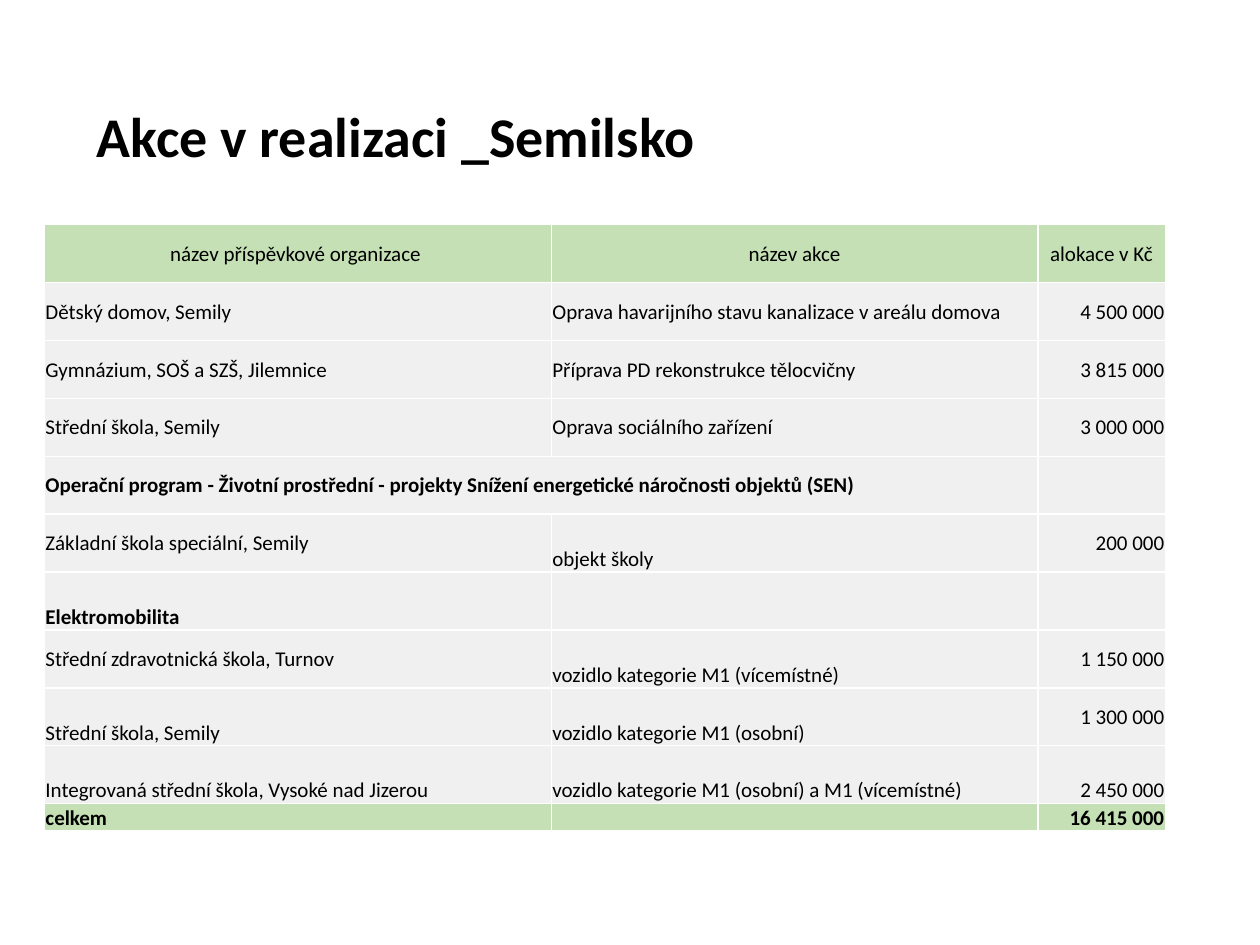
from lxml import etree
from pptx import Presentation
from pptx.dml.color import RGBColor
from pptx.enum.text import MSO_ANCHOR, MSO_AUTO_SIZE, PP_ALIGN
from pptx.oxml.ns import qn
from pptx.util import Pt

LEFT, CENTER, RIGHT = PP_ALIGN.LEFT, PP_ALIGN.CENTER, PP_ALIGN.RIGHT
MIDDLE, BOTTOM = MSO_ANCHOR.MIDDLE, MSO_ANCHOR.BOTTOM
GROW = MSO_AUTO_SIZE.SHAPE_TO_FIT_TEXT
GREEN, GRAY, WHITE, BLACK = "C5E0B4", "F0F0F0", "FFFFFF", "000000"


def color(value):
    return RGBColor.from_string(value)


def add_span(para, text, size, bold):
    span = para.add_run()
    span.text = text
    span.font.name = "Calibri"
    span.font.size = Pt(size)
    span.font.bold = bold
    span.font.color.rgb = color(BLACK)


deck = Presentation()
deck.slide_width, deck.slide_height = Pt(720), Pt(540)
page = deck.slides.add_slide(deck.slide_layouts[6])

title = page.shapes.add_textbox(Pt(48.2), Pt(54.7), Pt(601), Pt(46)).text_frame
title.word_wrap = True
title.auto_size = GROW
add_span(title.paragraphs[0], "Akce v realizaci _Semilsko", 32, True)

rows = [
    ("název příspěvkové organizace ", "název akce", "alokace v Kč"),
    ("Dětský domov, Semily", "Oprava havarijního stavu kanalizace v areálu domova", "4 500 000"),
    ("Gymnázium, SOŠ a SZŠ, Jilemnice", "Příprava PD rekonstrukce tělocvičny", "3 815 000"),
    ("Střední škola, Semily", "Oprava sociálního zařízení", "3 000 000"),
    ("Operační program - Životní prostřední - projekty Snížení energetické náročnosti objektů (SEN)", "", ""),
    ("Základní škola speciální, Semily", "objekt školy", "200 000"),
    ("Elektromobilita", "", ""),
    ("Střední zdravotnická škola, Turnov", "vozidlo kategorie M1 (vícemístné)", "1 150 000"),
    ("Střední škola, Semily", "vozidlo kategorie M1 (osobní)", "1 300 000"),
    ("Integrovaná střední škola, Vysoké nad Jizerou", "vozidlo kategorie M1 (osobní) a M1 (vícemístné)", "2 450 000"),
    ("celkem", "", "16 415 000"),
]
PROGRAM_ROW, TOTAL_ROW = 4, len(rows) - 1
bold_rows = {PROGRAM_ROW, 6, TOTAL_ROW}
bottom_starts = (6, 5, 9)
middle_cells = {(7, 0)}

frame = page.shapes.add_table(len(rows), 3, Pt(25.4), Pt(128.4), Pt(640.5), Pt(346.6))
table = frame.table
table.first_row = False
table.horz_banding = False
for column, width in zip(table.columns, (289.7, 278, 72.8)):
    column.width = Pt(width)
for row in table.rows:
    row.height = Pt(33.1)
table.rows[TOTAL_ROW].height = Pt(15.6)

for r, texts in enumerate(rows):
    for c, text in enumerate(texts):
        cell = table.cell(r, c)
        cell.margin_left = cell.margin_right = cell.margin_top = Pt(0.6)
        cell.margin_bottom = Pt(0)
        at_bottom = r >= bottom_starts[c] and (r, c) not in middle_cells
        cell.vertical_anchor = BOTTOM if at_bottom else MIDDLE
        properties = cell._tc.get_or_add_tcPr()
        for side in ("a:lnL", "a:lnR", "a:lnT", "a:lnB"):
            border = etree.SubElement(properties, qn(side), w=str(Pt(1)))
            fill = etree.SubElement(border, qn("a:solidFill"))
            etree.SubElement(fill, qn("a:srgbClr"), val=WHITE)
        cell.fill.solid()
        cell.fill.fore_color.rgb = color(GREEN if r in (0, TOTAL_ROW) else GRAY)
        para = cell.text_frame.paragraphs[0]
        para.alignment = CENTER if r == 0 else (LEFT, LEFT, RIGHT)[c]
        if text:
            add_span(para, text, 12, r in bold_rows)
        else:
            etree.SubElement(para._p, qn("a:endParaRPr"), sz="1200")

table.cell(PROGRAM_ROW, 0).merge(table.cell(PROGRAM_ROW, 1))

deck.save("out.pptx")
